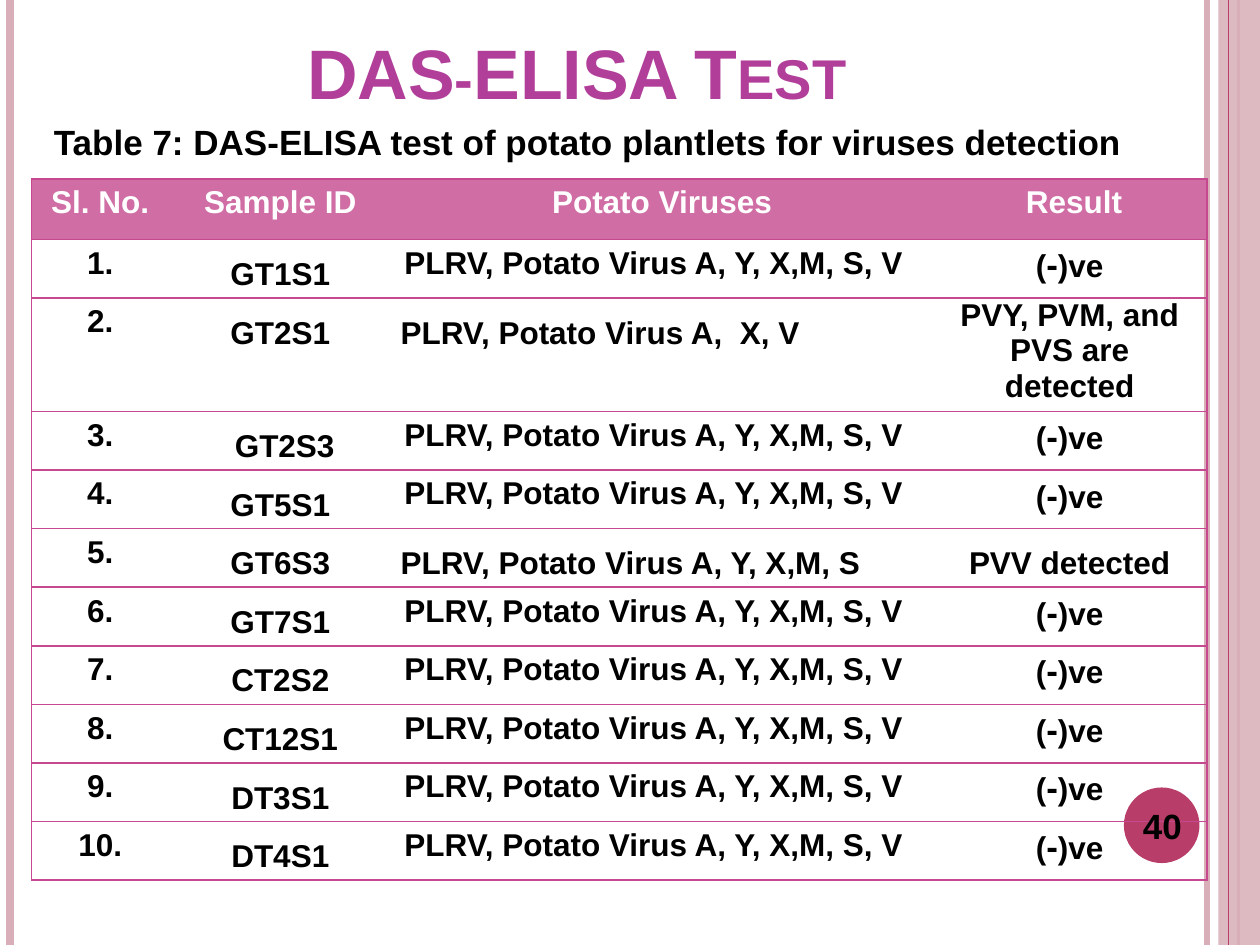
import pptx
import pptx.util
import pptx.dml.color
import pptx.enum.shapes
import pptx.enum.text
import pptx.oxml
import pptx.oxml.ns
from lxml import etree

Inches, Pt = pptx.util.Inches, pptx.util.Pt
RGB = pptx.dml.color.RGBColor.from_string
ALIGN = pptx.enum.text.PP_ALIGN
ANCHOR = pptx.enum.text.MSO_ANCHOR
SHAPE = pptx.enum.shapes.MSO_SHAPE
qn = pptx.oxml.ns.qn

COLORS = {
    "stripe": "D8AFB9", "accent": "B83D68", "title": "B13F9A",
    "header": "CF6DA4", "border": "C6488F", "text": "000000", "white": "FFFFFF",
}

deck = pptx.Presentation()
deck.slide_width, deck.slide_height = Inches(10), Inches(7.5)
page = deck.slides.add_slide(deck.slide_layouts[6])


def set_font(paragraph, size, color):
    paragraph.font.name = "Arial"
    paragraph.font.size = Pt(size)
    paragraph.font.bold = True
    paragraph.font.color.rgb = RGB(COLORS[color])


def add_text(left, top, width, height, text, size, color, anchor, align):
    box = page.shapes.add_textbox(Inches(left), Inches(top), Inches(width), Inches(height))
    frame = box.text_frame
    frame.word_wrap = True
    frame.vertical_anchor = anchor
    para = frame.paragraphs[0]
    para.text = text
    para.alignment = align
    set_font(para, size, color)
    return para


# Side band and number disc
band = page.shapes.add_shape(SHAPE.RECTANGLE, Inches(9.67), 0, Inches(0.33), Inches(7.5))
disc = page.shapes.add_shape(SHAPE.OVAL, Inches(8.92), Inches(6.25), Inches(0.6), Inches(0.6))
for shape, color in ((band, "stripe"), (disc, "accent")):
    shape.shadow.inherit = False
    shape.fill.solid()
    shape.fill.fore_color.rgb = RGB(COLORS[color])
    shape.line.fill.background()
band_color = band.fill._xPr.find(qn("a:solidFill"))[0]
etree.SubElement(band_color, qn("a:alpha"), val="87000")

# Vertical stripes: x, width, colour
for x, width, color in ((9.58, 3, "stripe"), (0.08, 4.5, "stripe"),
                        (9.83, 1.5, "stripe"), (9.75, 0.75, "accent")):
    stripe = page.shapes.add_connector(
        pptx.enum.shapes.MSO_CONNECTOR.STRAIGHT, Inches(x), 0, Inches(x), Inches(7.5))
    stripe.line.width = Pt(width)
    stripe.line.color.rgb = RGB(COLORS[color])
    etree.SubElement(stripe._element.spPr, qn("a:effectLst"))

# Title in small capitals
title = add_text(2.34, 0, 4.58, 0.95, "DAS-ELISA Test", 40, "title", ANCHOR.BOTTOM, ALIGN.LEFT)
title.runs[0].font._element.set("cap", "small")

# Table contents
ALL_VIRUSES = "PLRV, Potato Virus A, Y, X,M, S, V"
NEGATIVE = "(-)ve"
samples = ["GT1S1", "GT2S1", " GT2S3", "GT5S1", "GT6S3",
           "GT7S1", "CT2S2", "CT12S1", "DT3S1", "DT4S1"]
findings = {
    2: ("PLRV, Potato Virus A,  X, V", "PVY, PVM, and PVS are detected"),
    5: ("PLRV, Potato Virus A, Y, X,M, S", "PVV detected"),
}
rows = [("Sl. No.", "Sample ID", "Potato Viruses", " Result")]
for number, sample in enumerate(samples, 1):
    rows.append((f"{number}.", sample, *findings.get(number, (ALL_VIRUSES, NEGATIVE))))

BODY_HEIGHT = 4.65
table = page.shapes.add_table(len(rows), 4, Inches(0.25), Inches(1.42),
                              Inches(9.33), Inches(0.48 + BODY_HEIGHT)).table
for column, width in zip(table.columns, (1.09, 1.77, 4.29, 2.18)):
    column.width = Inches(width)

for r, values in enumerate(rows):
    table.rows[r].height = Inches(BODY_HEIGHT / len(samples) if r else 0.48)
    for c, value in enumerate(values):
        cell = table.cell(r, c)
        if r:
            cell.fill.background()
        else:
            cell.fill.solid()
            cell.fill.fore_color.rgb = RGB(COLORS["header"])

        # Text: sample IDs and special findings are tight with wide line spacing
        para = cell.text_frame.paragraphs[0]
        for part in ("(", "-", ")ve") if value == NEGATIVE else (value,):
            span = para.add_run()
            span.text = part
            if part == "-":
                span.font.size = Pt(20)
        para.alignment = ALIGN.LEFT if r and c == 2 else ALIGN.CENTER
        if r and (c == 1 or (c > 1 and r in findings)):
            cell.margin_left = cell.margin_right = Inches(0.08 if c == 3 else 0.07)
            cell.margin_top = cell.margin_bottom = 0
            if (r, c) != (2, 3):
                para.line_spacing = 1.5
        set_font(para, 18, "text" if r else "white")

        # Borders: outer frame and lines between rows, none between columns
        sides = {"lnL": c == 0, "lnR": c == 3, "lnT": True, "lnB": True}
        for place, (side, shown) in enumerate(sides.items()):
            edge = etree.Element(qn(f"a:{side}"), w=str(Pt(1)))
            if shown:
                fill = etree.SubElement(edge, qn("a:solidFill"))
                etree.SubElement(fill, qn("a:srgbClr"), val=COLORS["border"])
            else:
                etree.SubElement(edge, qn("a:noFill"))
            cell._tc.get_or_add_tcPr().insert(place, edge)

# Slide number and caption
add_text(8.89, 6.27, 0.67, 0.57, "40", 20, "text", ANCHOR.MIDDLE, ALIGN.CENTER)
add_text(0.33, 0.91, 9, 0.74, "Table 7: DAS-ELISA test of potato plantlets for viruses detection",
         20, "text", ANCHOR.TOP, ALIGN.LEFT)

deck.save("out.pptx")
